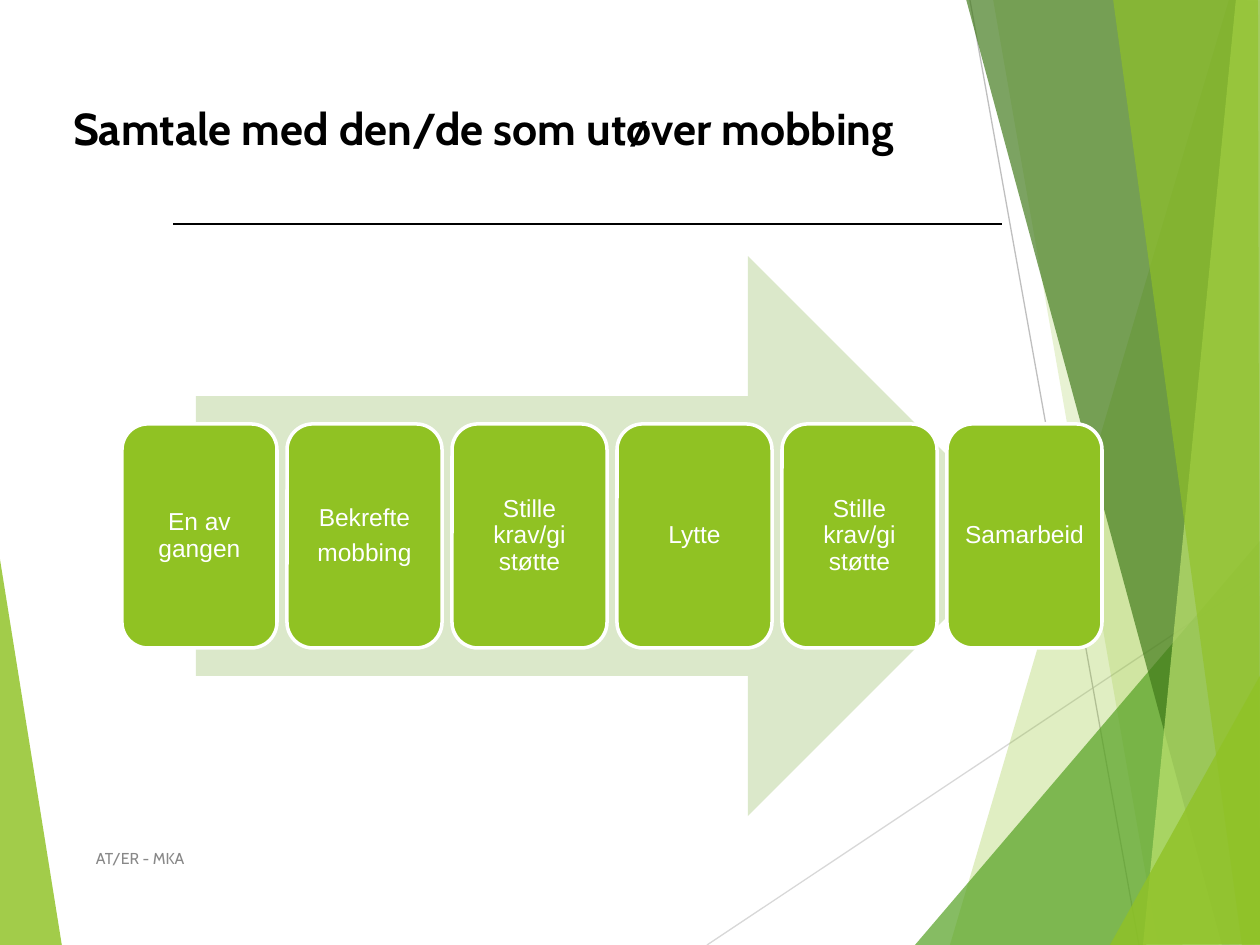
from lxml.etree import SubElement
from pptx import Presentation
from pptx.dml.color import RGBColor
from pptx.enum.shapes import MSO_CONNECTOR, MSO_SHAPE
from pptx.enum.text import MSO_ANCHOR, PP_ALIGN
from pptx.oxml.ns import qn
from pptx.util import Pt

SCALE = 914400 / 126
LIME = RGBColor(0x90, 0xC2, 0x26)
LEAF = RGBColor(0x54, 0xA0, 0x21)
PINE = RGBColor(0x3F, 0x78, 0x18)
MINT = RGBColor(0xBF, 0xE4, 0x71)
PALE = RGBColor(0xDB, 0xE8, 0xCA)
CARD = RGBColor(0x90, 0xC2, 0x23)
WHITE = RGBColor(0xFF, 0xFF, 0xFF)
BLACK = RGBColor(0, 0, 0)
SILVER = RGBColor(0xD8, 0xD8, 0xD8)
ASH = RGBColor(0xBF, 0xBF, 0xBF)
GRAY = RGBColor(0x88, 0x88, 0x88)

TITLE = "Samtale med den/de som utøver mobbing"
FOOTER = "AT/ER - MKA"
STEPS = [
    ["En av gangen"],
    ["Bekrefte", "mobbing"],
    ["Stille krav/gi støtte"],
    ["Lytte"],
    ["Stille krav/gi støtte"],
    ["Samarbeid"],
]
RAYS = [
    ((707, 945), (1261, 576), SILVER, 0.75),
    ((970, 0), (1139, 945), ASH, 0.75),
]
RULE = ((1002, 224), (173, 224), BLACK, 1.5)
WEDGE = ([(-1, 553), (62, 946), (-1, 945)], LIME, 83)
FACETS = [
    ([(1229, 0), (950, 945), (1262, 946), (1261, 1)], LIME, 28),
    ([(993, -1), (1158, 945), (1261, 945), (1261, -1)], LIME, 20),
    ([(915, 945), (1260, 541), (1261, 945)], LEAF, 70),
    ([(966, -1), (1222, 945), (1261, 944), (1261, -1)], PINE, 68),
    ([(1236, -1), (1143, 945), (1261, 945), (1260, -1)], MINT, 68),
    ([(1113, -1), (1242, 945), (1260, 945), (1258, -1)], LIME, 63),
    ([(1110, 945), (1261, 674), (1261, 944)], LIME, 80),
]


def px(*nums):
    return [round(n * SCALE) for n in nums]


def paint(shape, color, edge=None):
    shape.shadow.inherit = False
    shape.fill.solid()
    shape.fill.fore_color.rgb = color
    if edge:
        shape.line.color.rgb = edge
        shape.line.width = Pt(2)
    else:
        shape.line.fill.background()


def facet(points, color, alpha):
    pen = slide.shapes.build_freeform(*points[0], scale=SCALE)
    pen.add_line_segments(points[1:], close=True)
    shape = pen.convert_to_shape()
    paint(shape, color)
    tone = shape._element.spPr.find(qn("a:solidFill"))[0]
    SubElement(tone, qn("a:alpha"), val=str(alpha * 1000))


def stroke(start, end, color, width):
    line = slide.shapes.add_connector(MSO_CONNECTOR.STRAIGHT, *px(*start, *end))
    line.line.color.rgb = color
    line.line.width = Pt(width)
    SubElement(line._element.spPr, qn("a:effectLst"))


def write(shape, lines, size, color, font="Cabin", bold=False, inset=0,
          align=PP_ALIGN.LEFT, anchor=MSO_ANCHOR.MIDDLE, spacing=1.0, gap=0):
    frame = shape.text_frame
    frame.word_wrap = True
    frame.vertical_anchor = anchor
    pad = px(inset)[0]
    frame.margin_left = frame.margin_right = pad
    frame.margin_top = frame.margin_bottom = pad
    for i, line in enumerate(lines):
        para = frame.add_paragraph() if i else frame.paragraphs[0]
        para.alignment = align
        para.line_spacing = spacing
        para.space_before = Pt(gap if i else 0)
        run = para.add_run()
        run.text = line
        run.font.name = font
        run.font.size = Pt(size)
        run.font.bold = bold
        run.font.color.rgb = color


deck = Presentation()
deck.slide_width, deck.slide_height = px(1260, 945)
slide = deck.slides.add_slide(deck.slide_layouts[5])

facet(*WEDGE)
for ray in RAYS:
    stroke(*ray)
for item in FACETS:
    facet(*item)
stroke(*RULE)

title = slide.shapes.title
title.left, title.top, title.width, title.height = px(73, 101, 915, 72)
write(title, [TITLE], 25.5, BLACK, bold=True, anchor=MSO_ANCHOR.TOP)

arrow = slide.shapes.add_shape(MSO_SHAPE.RIGHT_ARROW, *px(196, 256, 832, 560))
paint(arrow, PALE)

for i, lines in enumerate(STEPS):
    card = slide.shapes.add_shape(
        MSO_SHAPE.ROUNDED_RECTANGLE, *px(122 + 165 * i, 424, 155, 224))
    paint(card, CARD, WHITE)
    write(card, lines, 14, WHITE, font="Arial", inset=7,
          align=PP_ALIGN.CENTER, spacing=0.9, gap=4.9)

footer = slide.shapes.add_textbox(*px(84, 833, 638, 50))
write(footer, [FOOTER], 9, GRAY, inset=12)

deck.save("out.pptx")
